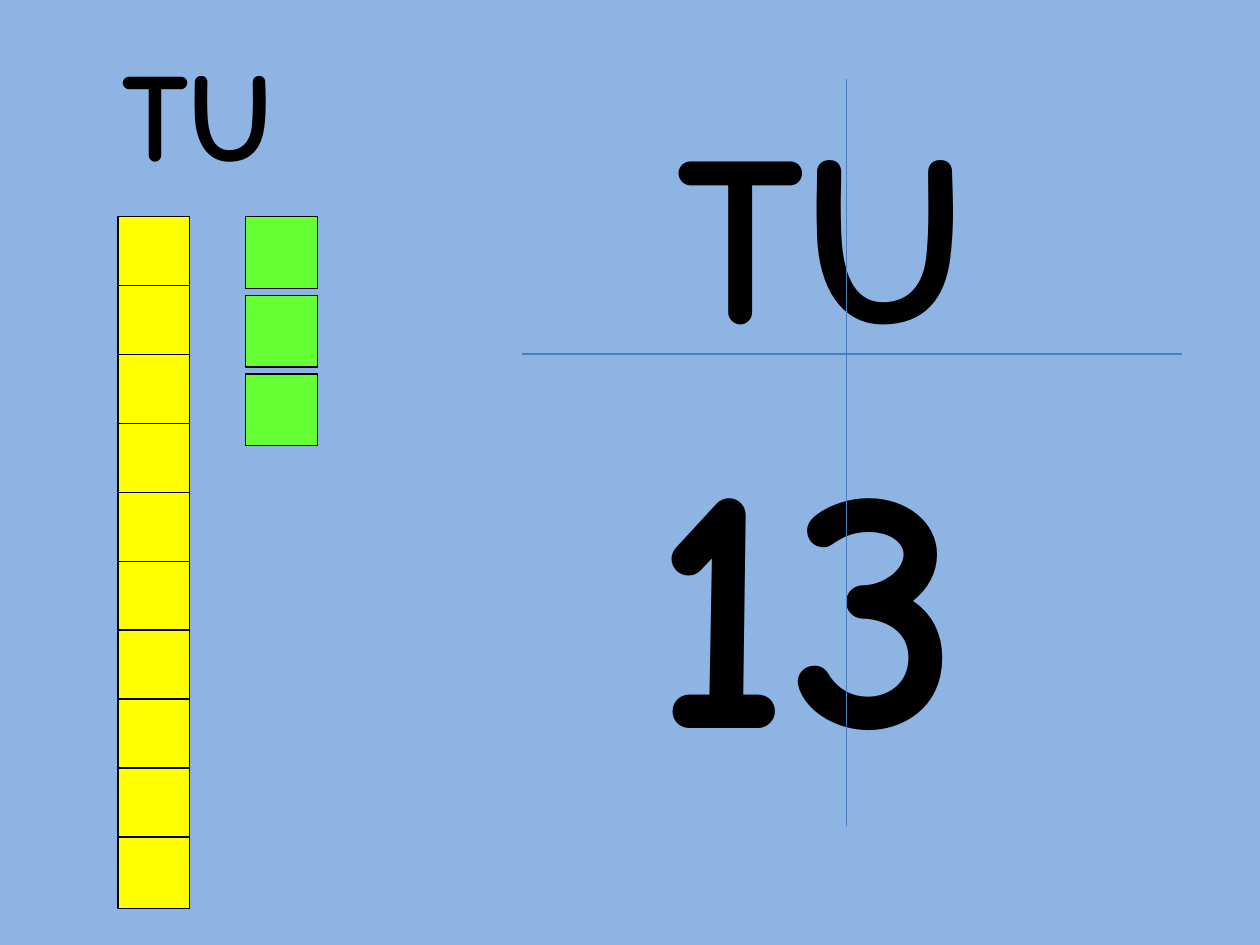
import pptx
import pptx.util
import pptx.dml.color
import pptx.enum.shapes
import pptx.enum.text
import pptx.oxml.ns
import lxml.etree

Pt = pptx.util.Pt

# Content: number thirteen as tens and units; all lengths in points
COLORS = {"background": "8EB4E3", "ten": "FFFF00", "unit": "66FF33",
          "ink": "000000", "grid": "4B7EBC"}
FONT = "Comic Neue"
CUBE_SIZE = 41
CUBE_TOP = 123.8
TEN_LEFT, TEN_COUNT, TEN_STEP = 67.5, 10, 39.38
UNIT_LEFT, UNIT_COUNT, UNIT_STEP = 140.5, 3, 45
HEADING = ("TU", 72, (62.6, 16.6, 416, 94.3))
LABELS = [  # text, font size, (left, top, width, height)
    ("13", 199, (365.8, 213.8, 270, 248.4)),
    ("TU", 138, (380.2, 43.2, 416, 174.2)),
]
GRID_LINES = [(483.8, 45.4, 483.8, 472.3), (298.1, 202.3, 675.4, 202.3)]


def color(name):
    return pptx.dml.color.RGBColor.from_string(COLORS[name])


def add_cubes(shapes, left, count, step, fill):
    for index in range(count):
        cube = shapes.add_shape(
            pptx.enum.shapes.MSO_SHAPE.RECTANGLE,
            Pt(left), Pt(CUBE_TOP + index * step), Pt(CUBE_SIZE), Pt(CUBE_SIZE))
        cube.shadow.inherit = False
        cube.fill.solid()
        cube.fill.fore_color.rgb = color(fill)
        cube.line.color.rgb = color("ink")
        cube.line.width = Pt(0.75)


def write_text(shape, text, size, box):
    shape.left, shape.top, shape.width, shape.height = map(Pt, box)
    frame = shape.text_frame
    frame.text = text
    frame.word_wrap = True
    frame.auto_size = pptx.enum.text.MSO_AUTO_SIZE.SHAPE_TO_FIT_TEXT
    frame.vertical_anchor = pptx.enum.text.MSO_ANCHOR.TOP
    paragraph = frame.paragraphs[0]
    paragraph.alignment = pptx.enum.text.PP_ALIGN.LEFT
    paragraph.font.name = FONT
    paragraph.font.size = Pt(size)
    paragraph.font.bold = True
    paragraph.font.color.rgb = color("ink")


def add_grid_line(shapes, ends):
    line = shapes.add_connector(
        pptx.enum.shapes.MSO_CONNECTOR.STRAIGHT, *map(Pt, ends))
    line.line.color.rgb = color("grid")
    line.line.width = Pt(0.75)
    lxml.etree.SubElement(line._element.spPr, pptx.oxml.ns.qn("a:effectLst"))


def main():
    presentation = pptx.Presentation()
    presentation.slide_width, presentation.slide_height = Pt(720), Pt(540)
    slide = presentation.slides.add_slide(presentation.slide_layouts[5])
    slide.background.fill.solid()
    slide.background.fill.fore_color.rgb = color("background")

    # Heading above the cubes
    write_text(slide.shapes.title, *HEADING)

    # One ten as a grouped stick, then loose units
    ten_stick = slide.shapes.add_group_shape()
    add_cubes(ten_stick.shapes, TEN_LEFT, TEN_COUNT, TEN_STEP, "ten")
    add_cubes(slide.shapes, UNIT_LEFT, UNIT_COUNT, UNIT_STEP, "unit")

    # Place value chart
    for text, size, box in LABELS:
        write_text(slide.shapes.add_textbox(*map(Pt, box)), text, size, box)
    for ends in GRID_LINES:
        add_grid_line(slide.shapes, ends)

    presentation.save("out.pptx")


if __name__ == "__main__":
    main()
